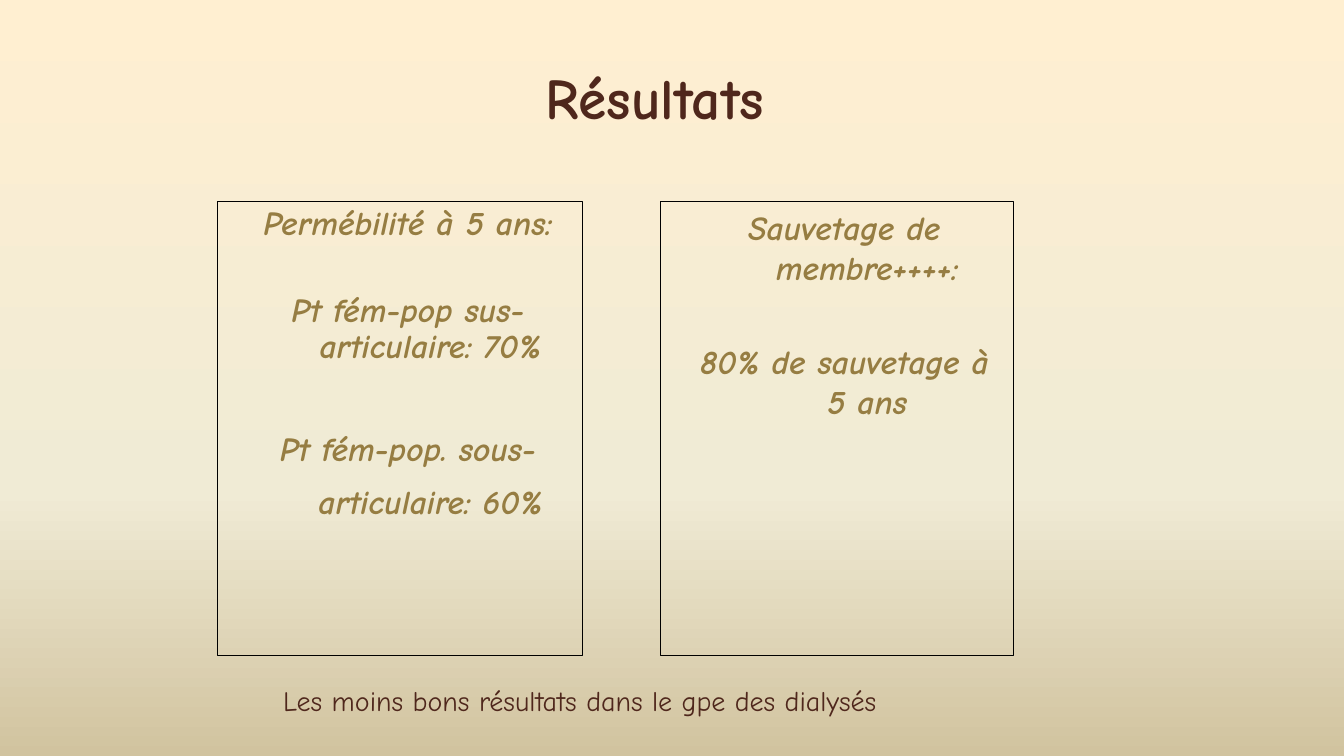
from copy import deepcopy
from dataclasses import dataclass

from pptx import Presentation
from pptx.dml.color import RGBColor
from pptx.enum.shapes import MSO_SHAPE
from pptx.enum.text import MSO_ANCHOR, MSO_AUTO_SIZE, PP_ALIGN
from pptx.util import Inches, Pt


@dataclass(frozen=True)
class Theme:
    font: str = "Comic Neue"
    brown: str = "4F271C"
    gold: str = "967D42"
    border: str = "000000"
    backdrop: tuple = ((0, "FFEFD1"), (0.65, "F0EBD5"), (1, "D1C39F"))
    title_size: int = 41
    result_size: int = 24
    remark_size: int = 20


theme = Theme()


def add_run(paragraph, words, size, color, bold=False, italic=False):
    run = paragraph.add_run()
    run.text = words
    run.font.name = theme.font
    run.font.size = Pt(size)
    run.font.bold = bold
    run.font.italic = italic
    run.font.color.rgb = RGBColor.from_string(color)


deck = Presentation()
deck.slide_width = Inches(13.33)
deck.slide_height = Inches(7.5)
slide = deck.slides.add_slide(deck.slide_layouts[5])

backdrop = slide.background.fill
backdrop.gradient()
backdrop.gradient_angle = 270
stop_list = backdrop.gradient_stops[0]._gs.getparent()
stop_list.insert(1, deepcopy(stop_list[0]))
for stop, (position, color) in zip(backdrop.gradient_stops, theme.backdrop):
    stop.position = position
    stop.color.rgb = RGBColor.from_string(color)

heading = slide.shapes.title
heading.left, heading.top = Inches(2.71), Inches(0.33)
heading.width, heading.height = Inches(7.57), Inches(1.25)
heading.text_frame.vertical_anchor = MSO_ANCHOR.MIDDLE
heading_line = heading.text_frame.paragraphs[0]
heading_line.alignment = PP_ALIGN.CENTER
add_run(heading_line, "Résultats", theme.title_size, theme.brown, bold=True)

outcomes = [
    (2.16, 3.62, 36, [
        ("Permébilité à 5 ans:", 0.9),
        ("Pt fém-pop sus-articulaire: 70%", 0.9),
        ("Pt fém-pop. sous-articulaire: 60%", 1.3),
    ]),
    (6.55, 3.5, 38.5, [
        ("Sauvetage de membre++++:", 1.0),
        ("80% de sauvetage à 5 ans", 1.0),
    ]),
]
for left, width, gap, findings in outcomes:
    panel = slide.shapes.add_shape(
        MSO_SHAPE.RECTANGLE, Inches(left), Inches(2), Inches(width), Inches(4.5))
    panel.shadow.inherit = False
    panel.fill.background()
    panel.line.color.rgb = RGBColor.from_string(theme.border)
    panel.line.width = Pt(0.75)
    frame = panel.text_frame
    frame.word_wrap = True
    frame.vertical_anchor = MSO_ANCHOR.TOP
    for index, (words, spacing) in enumerate(findings):
        finding = frame.add_paragraph() if index else frame.paragraphs[0]
        finding.alignment = PP_ALIGN.CENTER
        finding.line_spacing = spacing
        finding.space_before = Pt(gap if index else 0)
        indents = finding._p.get_or_add_pPr()
        indents.set("marL", str(Inches(0.6)))
        indents.set("indent", str(Inches(-0.45)))
        add_run(finding, words, theme.result_size, theme.gold, bold=True, italic=True)

remark = slide.shapes.add_textbox(Inches(2.71), Inches(6.73), Inches(6.61), Inches(0.44))
remark.text_frame.word_wrap = False
remark.text_frame.auto_size = MSO_AUTO_SIZE.SHAPE_TO_FIT_TEXT
remark_line = remark.text_frame.paragraphs[0]
remark_line.alignment = PP_ALIGN.LEFT
add_run(remark_line, "Les moins bons résultats dans le gpe des dialysés",
        theme.remark_size, theme.brown)

deck.save("out.pptx")
